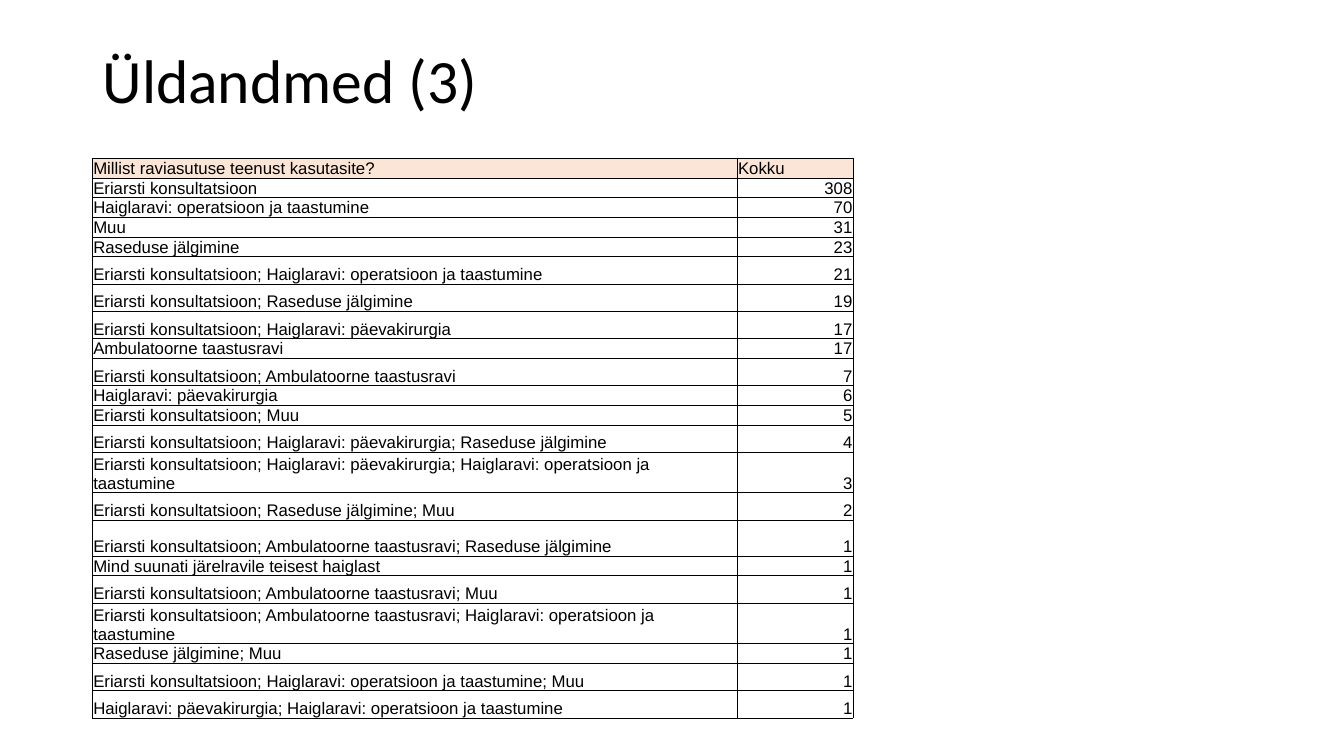
"""Build the general data slide with a table of the services used."""
from dataclasses import dataclass

from lxml import etree
from pptx import Presentation
from pptx.dml.color import RGBColor
from pptx.enum.text import MSO_ANCHOR, PP_ALIGN
from pptx.oxml.ns import qn
from pptx.util import Cm, Pt

LEFT, RIGHT = PP_ALIGN.LEFT, PP_ALIGN.RIGHT
MIDDLE, BOTTOM = MSO_ANCHOR.MIDDLE, MSO_ANCHOR.BOTTOM


@dataclass(frozen=True)
class Theme:
    ink: str = "000000"
    header_fill: str = "FBE5D6"
    title_font: str = "Calibri"
    table_font: str = "Arial"
    title_size: int = 44
    table_size: int = 12
    border_width: float = 0.5


THEME = Theme()


def write_text(frame, text, *, font, size, align=LEFT, spacing=None):
    frame.word_wrap = True
    paragraph = frame.paragraphs[0]
    paragraph.alignment = align
    paragraph.line_spacing = spacing
    run = paragraph.add_run()
    run.text = text
    run.font.name = font
    run.font.size = Pt(size)
    run.font.color.rgb = RGBColor.from_string(THEME.ink)


def draw_borders(cell):
    properties = cell._tc.get_or_add_tcPr()
    for side in ("lnL", "lnR", "lnT", "lnB"):
        line = etree.SubElement(properties, qn(f"a:{side}"), w=str(Pt(THEME.border_width)))
        fill = etree.SubElement(line, qn("a:solidFill"))
        etree.SubElement(fill, qn("a:srgbClr"), val=THEME.ink)


LOW, MEDIUM, TALL, DOUBLE = Cm(0.46), Cm(0.69), Cm(0.91), Cm(1.02)
SERVICES = [
    ("Millist raviasutuse teenust kasutasite?", "Kokku", LOW),
    ("Eriarsti konsultatsioon", "308", LOW),
    ("Haiglaravi: operatsioon ja taastumine", "70", LOW),
    ("Muu", "31", LOW),
    ("Raseduse jälgimine", "23", LOW),
    ("Eriarsti konsultatsioon; Haiglaravi: operatsioon ja taastumine", "21", MEDIUM),
    ("Eriarsti konsultatsioon; Raseduse jälgimine", "19", MEDIUM),
    ("Eriarsti konsultatsioon; Haiglaravi: päevakirurgia", "17", MEDIUM),
    ("Ambulatoorne taastusravi", "17", LOW),
    ("Eriarsti konsultatsioon; Ambulatoorne taastusravi", "7", MEDIUM),
    ("Haiglaravi: päevakirurgia", "6", LOW),
    ("Eriarsti konsultatsioon; Muu", "5", LOW),
    ("Eriarsti konsultatsioon; Haiglaravi: päevakirurgia; Raseduse jälgimine", "4", MEDIUM),
    ("Eriarsti konsultatsioon; Haiglaravi: päevakirurgia; Haiglaravi: operatsioon ja taastumine",
     "3", DOUBLE),
    ("Eriarsti konsultatsioon; Raseduse jälgimine; Muu", "2", MEDIUM),
    ("Eriarsti konsultatsioon; Ambulatoorne taastusravi; Raseduse jälgimine", "1", TALL),
    ("Mind suunati järelravile teisest haiglast", "1", LOW),
    ("Eriarsti konsultatsioon; Ambulatoorne taastusravi; Muu", "1", MEDIUM),
    ("Eriarsti konsultatsioon; Ambulatoorne taastusravi; Haiglaravi: operatsioon ja taastumine",
     "1", DOUBLE),
    ("Raseduse jälgimine; Muu", "1", LOW),
    ("Eriarsti konsultatsioon; Haiglaravi: operatsioon ja taastumine; Muu", "1", MEDIUM),
    ("Haiglaravi: päevakirurgia; Haiglaravi: operatsioon ja taastumine", "1", MEDIUM),
]
SERVICE_WIDTH, TOTAL_WIDTH = Cm(16.25), Cm(2.92)

presentation = Presentation()
presentation.slide_width, presentation.slide_height = Cm(33.87), Cm(19.05)
slide = presentation.slides.add_slide(presentation.slide_layouts[5])

heading = slide.shapes.title
heading.left, heading.top, heading.width, heading.height = Cm(2.33), Cm(1.02), Cm(29.21), Cm(2.16)
heading.text_frame.vertical_anchor = MIDDLE
write_text(heading.text_frame, "Üldandmed (3)", font=THEME.title_font,
           size=THEME.title_size, spacing=0.9)

services = slide.shapes.add_table(
    len(SERVICES), 2, Cm(2.33), Cm(3.99), SERVICE_WIDTH + TOTAL_WIDTH,
    sum(height for _, _, height in SERVICES)).table
services.first_row = services.horz_banding = False
services.columns[0].width, services.columns[1].width = SERVICE_WIDTH, TOTAL_WIDTH

for row, (service, total, height) in enumerate(SERVICES):
    services.rows[row].height = height
    for column, text in enumerate((service, total)):
        cell = services.cell(row, column)
        cell.vertical_anchor = BOTTOM
        cell.margin_left = cell.margin_right = cell.margin_top = Cm(0.02)
        cell.margin_bottom = 0
        draw_borders(cell)
        if row == 0:
            cell.fill.solid()
            cell.fill.fore_color.rgb = RGBColor.from_string(THEME.header_fill)
        else:
            cell.fill.background()
        write_text(cell.text_frame, text, font=THEME.table_font, size=THEME.table_size,
                   align=RIGHT if row and column else LEFT)

presentation.save("out.pptx")
